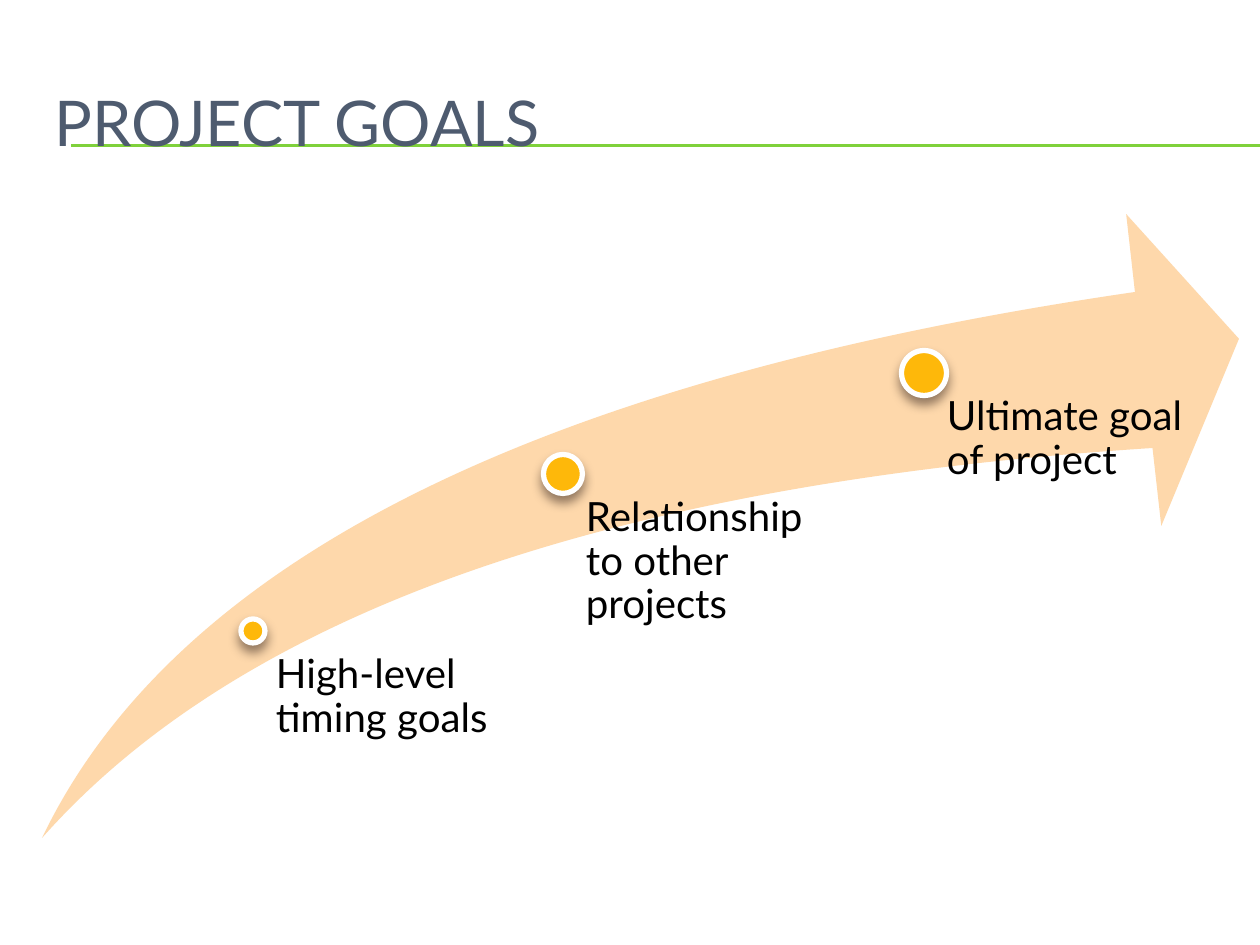
from lxml import etree
from pptx import Presentation
from pptx import util as u
from pptx.dml import color
from pptx.enum import shapes, text
from pptx.oxml import ns

SCALE = 914400 / 126
COLORS = {
    "rule": "7FD13B",
    "title": "4E5B6F",
    "arrow": "FED8AB",
    "dot": "FEB80A",
    "ring": "FFFFFF",
    "shadow": "4E3B30",
    "label": "000000",
}
MILESTONES = [
    ("High-level timing goals", 253, 631, 24),
    ("Relationship to other projects", 563, 474, 39),
    ("Ultimate goal of project", 924, 373, 45),
]


def px(*lengths):
    return [u.Emu(round(length * SCALE)) for length in lengths]


def rgb(name):
    return color.RGBColor.from_string(COLORS[name])


class GoalsSlide:
    font = "Lato"

    def __init__(self, deck):
        self.page = deck.slides.add_slide(deck.slide_layouts[6])

    def rule(self, left, right, y):
        line = self.page.shapes.add_connector(
            shapes.MSO_CONNECTOR.STRAIGHT, *px(left, y, right, y))
        line.line.color.rgb = rgb("rule")
        line.line.width = u.Pt(0.75)
        etree.SubElement(line._element.spPr, ns.qn("a:effectLst"))

    def text(self, words, place, size, name, inset=None, spacing=None,
             anchor=text.MSO_ANCHOR.TOP):
        box = self.page.shapes.add_textbox(*px(*place))
        frame = box.text_frame
        frame.word_wrap = True
        frame.vertical_anchor = anchor
        if inset is not None:
            (margin,) = px(inset)
            frame.margin_left = frame.margin_right = margin
            frame.margin_top = frame.margin_bottom = margin
        para = frame.paragraphs[0]
        para.text = words
        para.line_spacing = spacing
        para.font.name = self.font
        para.font.size = u.Pt(size)
        para.font.color.rgb = rgb(name)

    def shape(self, kind, place, fill):
        shape = self.page.shapes.add_shape(kind, *px(*place))
        shape.shadow.inherit = False
        shape.fill.solid()
        shape.fill.fore_color.rgb = rgb(fill)
        shape.line.fill.background()
        return shape

    def dot(self, x, y, size):
        place = (x - size / 2, y - size / 2, size, size)
        dot = self.shape(shapes.MSO_SHAPE.OVAL, place, "dot")
        dot.line.color.rgb = rgb("ring")
        dot.line.width = u.Pt(3)
        effects = dot._element.spPr.find(ns.qn("a:effectLst"))
        shadow = etree.SubElement(
            effects, ns.qn("a:outerShdw"), blurRad=str(u.Pt(6)),
            dist=str(u.Pt(4)), dir="5400000", rotWithShape="0")
        tint = etree.SubElement(shadow, ns.qn("a:srgbClr"), val=COLORS["shadow"])
        etree.SubElement(tint, ns.qn("a:alpha"), val="60000")

    def milestone(self, words, x, y, size):
        self.text(words, (x, y, 300, 163), 23, "label", inset=23, spacing=0.9)
        self.dot(x, y, size)


def main():
    deck = Presentation()
    deck.slide_width, deck.slide_height = px(1260, 945)
    goals = GoalsSlide(deck)
    for y in (145, 146):
        goals.rule(71, 1260, y)
    goals.text("PROJECT GOALS", (42, 63, 1197, 116), 36, "title",
               anchor=text.MSO_ANCHOR.MIDDLE)
    goals.shape(shapes.MSO_SHAPE.SWOOSH_ARROW, (42, 214, 1197, 624), "arrow")
    for milestone in MILESTONES:
        goals.milestone(*milestone)
    deck.save("out.pptx")


if __name__ == "__main__":
    main()
